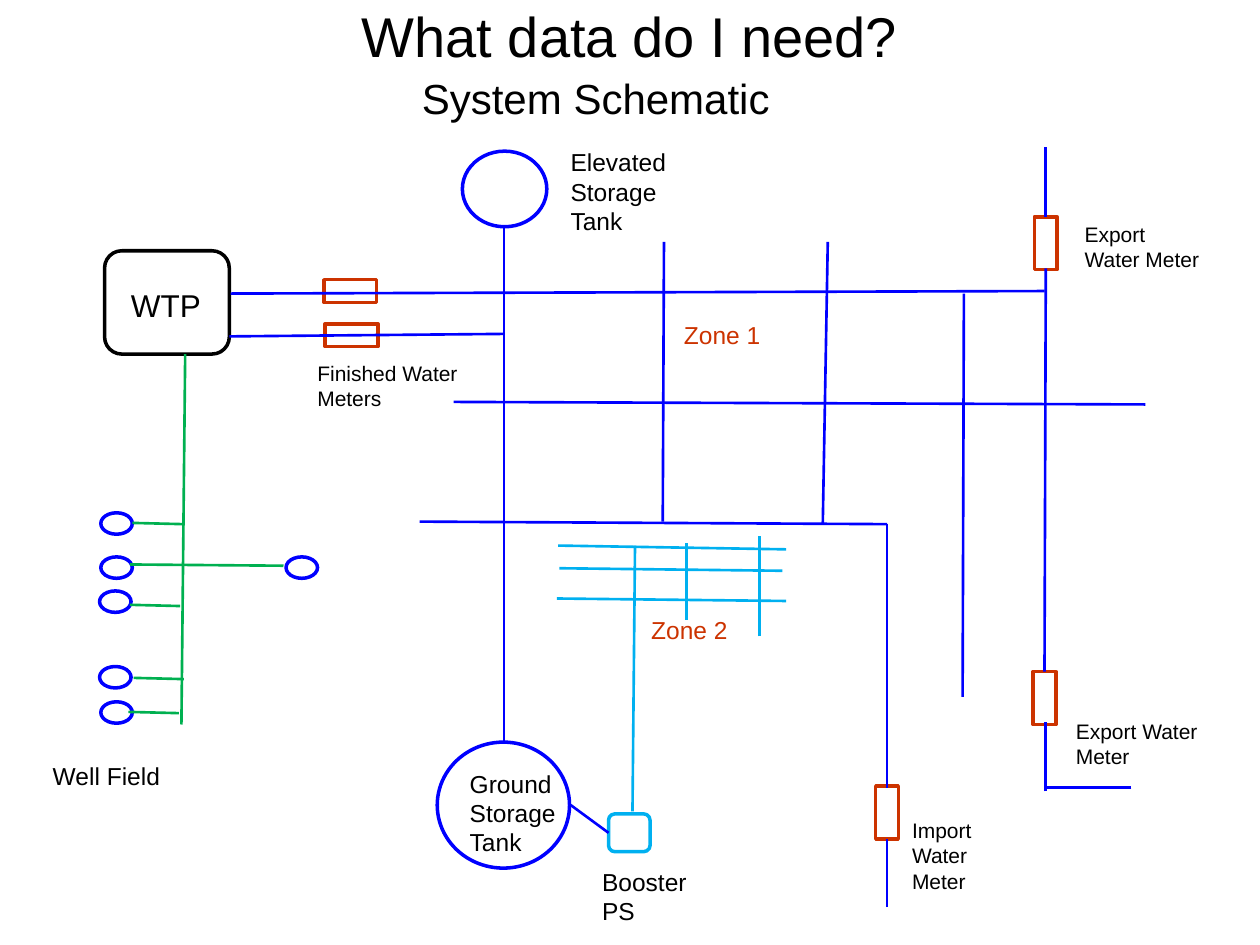
import pptx
import pptx.dml.color
import pptx.enum.shapes
import pptx.enum.text
import pptx.util
import pptx.oxml.ns
import lxml.etree

PX = 9144  # 100 px to the inch
FONT = "Arial"
BLACK, BLUE, RED = "000000", "0000FF", "CC3300"
GREEN, CYAN = "00B050", "00B0F0"

# Symbols: left, top, width, height
TANKS = [(367, 120, 67, 60), (347, 589, 105, 100)]
WELLS = [(80, 557), (80, 407), (80, 442), (79, 469), (79, 529), (227, 442)]
WELL_SIZE = (25, 17)
PLANT = (83, 199, 99, 82)
BOOSTER = (483, 646, 33, 30)
# Meters: left, top, rotation
METERS = [
    (257, 222, 0), (258, 257, 0),
    (809, 184, 270), (808, 545, 270), (683, 636, 270),
]
METER_SIZE = (42, 18)

# Pipes: from x, from y, to x, to y
PIPES = {
    BLUE: [
        (183, 233, 829, 231), (182, 267, 400, 265),
        (400, 589, 400, 180), (829, 533, 830, 213),
        (453, 639, 483, 661), (704, 625, 704, 416),
        (704, 720, 704, 666), (333, 414, 704, 416),
        (830, 628, 830, 573), (898, 625, 830, 625),
        (830, 172, 830, 117), (360, 319, 909, 321),
        (526, 414, 527, 192), (764, 553, 765, 233),
        (653, 416, 657, 192),
    ],
    GREEN: [
        (144, 575, 147, 281), (105, 415, 145, 416),
        (103, 448, 225, 449), (103, 480, 143, 481),
        (106, 538, 146, 539), (102, 565, 142, 566),
    ],
    CYAN: [
        (502, 644, 504, 433), (443, 433, 624, 436),
        (444, 451, 621, 453), (442, 475, 624, 477),
        (603, 505, 603, 425), (545, 492, 545, 431),
    ],
}

# Labels: text, box, size, colour
LABELS = [
    ("System Schematic", (325, 53, 317, 50), 24, BLACK),
    ("Well Field", (32, 599, 125, 34), 14, BLACK),
    ("WTP", (94, 222, 88, 40), 18, BLACK),
    ("Finished Water Meters", (242, 281, 142, 50), 12, BLACK),
    ("Export Water Meter", (844, 565, 139, 50), 12, BLACK),
    ("Export Water Meter", (851, 171, 116, 50), 12, BLACK),
    ("Import Water Meter", (714, 644, 70, 71), 12, BLACK),
    ("Ground Storage Tank", (363, 605, 96, 81), 14, BLACK),
    ("Elevated Storage Tank", (443, 112, 96, 81), 14, BLACK),
    ("Booster PS", (468, 683, 92, 57), 14, BLACK),
    ("Zone 1", (533, 249, 92, 34), 14, RED),
    ("Zone 2", (507, 483, 92, 34), 14, RED),
]

SHAPE = pptx.enum.shapes.MSO_SHAPE
ALIGN = pptx.enum.text.PP_ALIGN
ANCHOR = pptx.enum.text.MSO_ANCHOR
AUTO_SIZE = pptx.enum.text.MSO_AUTO_SIZE


def emu(lengths):
    return [length * PX for length in lengths]


def rgb(colour):
    return pptx.dml.color.RGBColor.from_string(colour)


def set_line(line, colour, width):
    line.color.rgb = rgb(colour)
    line.width = pptx.util.Pt(width)


def add_outline(slide, kind, box, colour, rotation=0):
    shape = slide.shapes.add_shape(kind, *emu(box))
    shape.shadow.inherit = False
    shape.fill.background()
    set_line(shape.line, colour, 2)
    shape.rotation = rotation


def add_pipe(slide, ends, colour):
    pipe = slide.shapes.add_connector(
        pptx.enum.shapes.MSO_CONNECTOR.STRAIGHT, *emu(ends))
    set_line(pipe.line, colour, 1.5)
    lxml.etree.SubElement(pipe._element.spPr, pptx.oxml.ns.qn("a:effectLst"))


def add_text(slide, text, box, size, colour=BLACK, align=ALIGN.LEFT,
             anchor=ANCHOR.TOP, auto_size=AUTO_SIZE.SHAPE_TO_FIT_TEXT):
    frame = slide.shapes.add_textbox(*emu(box)).text_frame
    frame.word_wrap = True
    frame.auto_size = auto_size
    frame.vertical_anchor = anchor
    paragraph = frame.paragraphs[0]
    paragraph.alignment = align
    run = paragraph.add_run()
    run.text = text
    run.font.name = FONT
    run.font.size = pptx.util.Pt(size)
    run.font.color.rgb = rgb(colour)


def main():
    deck = pptx.Presentation()
    deck.slide_width, deck.slide_height = emu((1000, 750))
    slide = deck.slides.add_slide(deck.slide_layouts[6])

    for tank in TANKS:
        add_outline(slide, SHAPE.OVAL, tank, BLUE)
    for well in WELLS:
        add_outline(slide, SHAPE.OVAL, well + WELL_SIZE, BLUE)
    add_outline(slide, SHAPE.ROUNDED_RECTANGLE, PLANT, BLACK)
    add_outline(slide, SHAPE.ROUNDED_RECTANGLE, BOOSTER, CYAN)
    for left, top, rotation in METERS:
        add_outline(slide, SHAPE.RECTANGLE, (left, top) + METER_SIZE, RED, rotation)

    for colour, pipes in PIPES.items():
        for ends in pipes:
            add_pipe(slide, ends, colour)

    for text, box, size, colour in LABELS:
        add_text(slide, text, box, size, colour=colour)
    add_text(slide, "What data do I need?", (50, 2, 900, 52), 32,
             align=ALIGN.CENTER, anchor=ANCHOR.MIDDLE, auto_size=AUTO_SIZE.NONE)

    deck.save("out.pptx")


if __name__ == "__main__":
    main()
